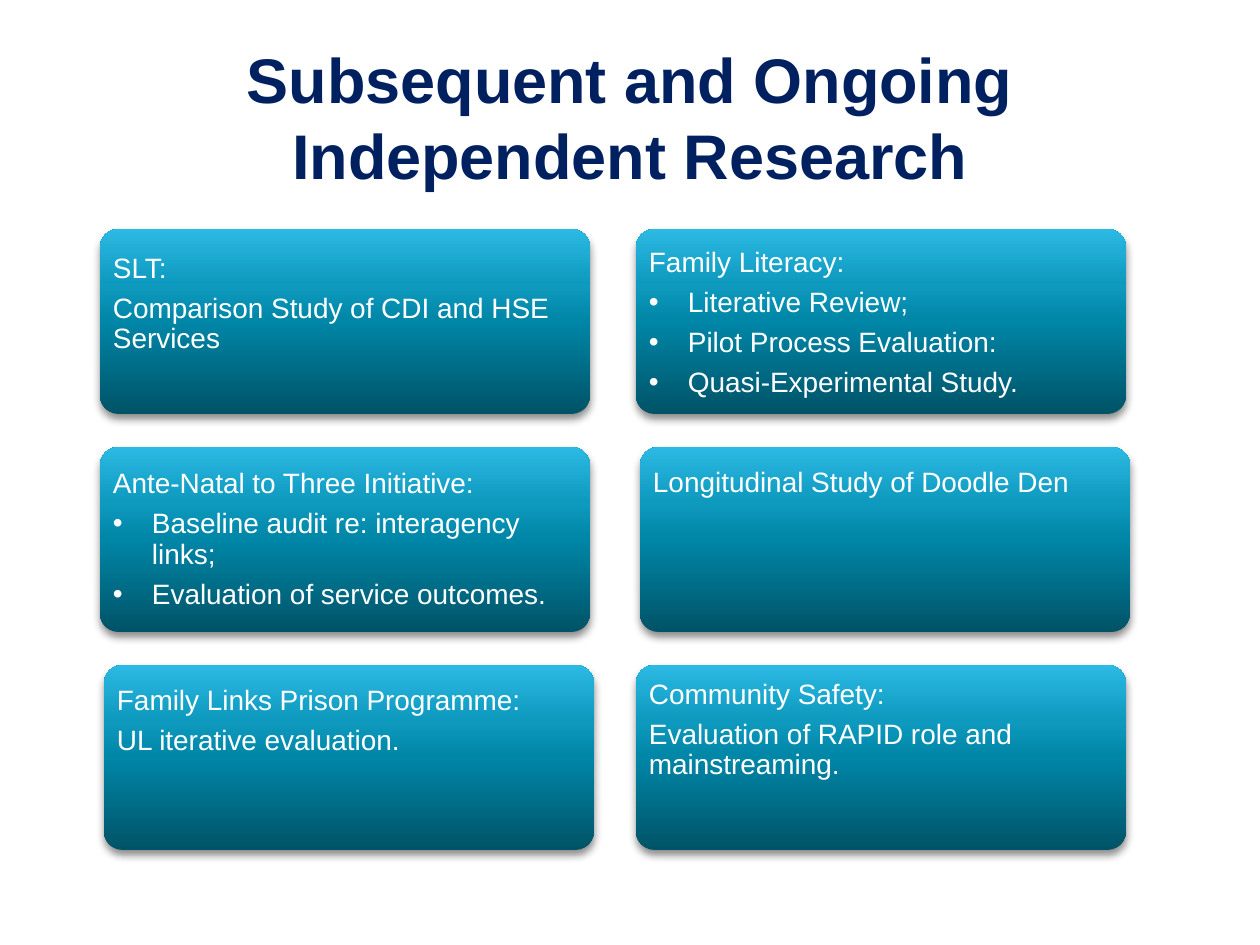
from lxml import etree
from pptx import Presentation
from pptx import util as u
from pptx.dml.color import RGBColor
from pptx.enum import shapes, text
from pptx.oxml import parse_xml
from pptx.oxml.ns import nsdecls, qn

PX = 7257  # EMU per px, at 126 px to the inch
GRADIENT = [(0, "005367"), (50, "0086A7"), (70, "0E9ABE"), (100, "2CB9E3")]
CARD_W, CARD_H = 490, 185
TEXT_W, TEXT_H = 486, 219
INSET, INDENT = 9, 39
ROW_TOP, ROW_STEP = 229, 218


def box(*lengths):
    return [u.Emu(n * PX) for n in lengths]


def format_font(font, size, color, bold=False):
    values = {"name": "Arial", "size": u.Pt(size), "bold": bold}
    for name, value in values.items():
        setattr(font, name, value)
    font.color.rgb = RGBColor.from_string(color)


# left, text top, extra space under the text, lines ("•" marks a bullet)
cards = [
    (100, 195, 0, ["SLT:", "Comparison Study of CDI and HSE Services"]),
    (636, 214, 0, ["Family Literacy:", "•Literative Review;",
                   "•Pilot Process Evaluation:", "•Quasi-Experimental Study."]),
    (100, 452, 43, ["Ante-Natal to Three Initiative:",
                    "•Baseline audit re: interagency links;",
                    "•Evaluation of service outcomes."]),
    (640, 393, 39, ["Longitudinal Study of Doodle Den"]),
    (104, 631, 39, ["Family Links Prison Programme:", "UL iterative evaluation."]),
    (636, 621, 0, ["Community Safety:",
                   "Evaluation of RAPID role and mainstreaming."]),
]

prs = Presentation()
prs.slide_width, prs.slide_height = u.Inches(10), u.Inches(7.5)
s = prs.slides.add_slide(prs.slide_layouts[5])

title = s.shapes.title
title.left, title.top, title.width, title.height = box(63, 38, 1134, 157)
tf = title.text_frame
tf.vertical_anchor = text.MSO_ANCHOR.MIDDLE
p = tf.paragraphs[0]
p.alignment = text.PP_ALIGN.CENTER
r = p.add_run()
r.text = "Subsequent and Ongoing Independent Research"
format_font(r.font, 36, "002060", bold=True)

stops = "".join(f'<a:gs pos="{pos * 1000}"><a:srgbClr val="{color}"/></a:gs>'
                for pos, color in GRADIENT)
gradient_xml = (f'<a:gradFill {nsdecls("a")} rotWithShape="1"><a:gsLst>{stops}</a:gsLst>'
                '<a:lin ang="16200000" scaled="0"/></a:gradFill>')
shadow_xml = (f'<a:effectLst {nsdecls("a")}>'
              f'<a:outerShdw blurRad="{u.Pt(5)}" dist="{u.Pt(3)}" dir="5400000" rotWithShape="0">'
              '<a:srgbClr val="000000"><a:alpha val="45000"/></a:srgbClr>'
              '</a:outerShdw></a:effectLst>')

for i, (left, text_top, space_under, lines) in enumerate(cards):
    group = s.shapes.add_group_shape()
    top = ROW_TOP + i // 2 * ROW_STEP
    sp = group.shapes.add_shape(shapes.MSO_SHAPE.ROUNDED_RECTANGLE,
                                *box(left, top, CARD_W, CARD_H))
    sp.adjustments[0] = 0.1
    sp.line.fill.background()
    spPr = sp._element.spPr
    spPr.find(qn("a:prstGeom")).addnext(parse_xml(gradient_xml))
    spPr.append(parse_xml(shadow_xml))

    tf = group.shapes.add_textbox(*box(left + 4, text_top, TEXT_W, TEXT_H)).text_frame
    margins = box(INSET, INSET, INSET, INSET + space_under)
    for side, margin in zip(("left", "top", "right", "bottom"), margins):
        setattr(tf, f"margin_{side}", margin)
    tf.word_wrap = True
    tf.vertical_anchor = text.MSO_ANCHOR.MIDDLE

    for n, line in enumerate(lines):
        p = tf.paragraphs[0] if n == 0 else tf.add_paragraph()
        if line.startswith("•"):
            pPr = p._p.get_or_add_pPr()
            pPr.set("marL", str(INDENT * PX))
            pPr.set("indent", str(-INDENT * PX))
            etree.SubElement(pPr, qn("a:buFont"), typeface="Arial")
            etree.SubElement(pPr, qn("a:buChar"), char="•")
        p.line_spacing = 0.9
        p.space_after = u.Pt(5.6)
        r = p.add_run()
        r.text = line.lstrip("•")
        format_font(r.font, 16, "FFFFFF")

prs.save("out.pptx")
